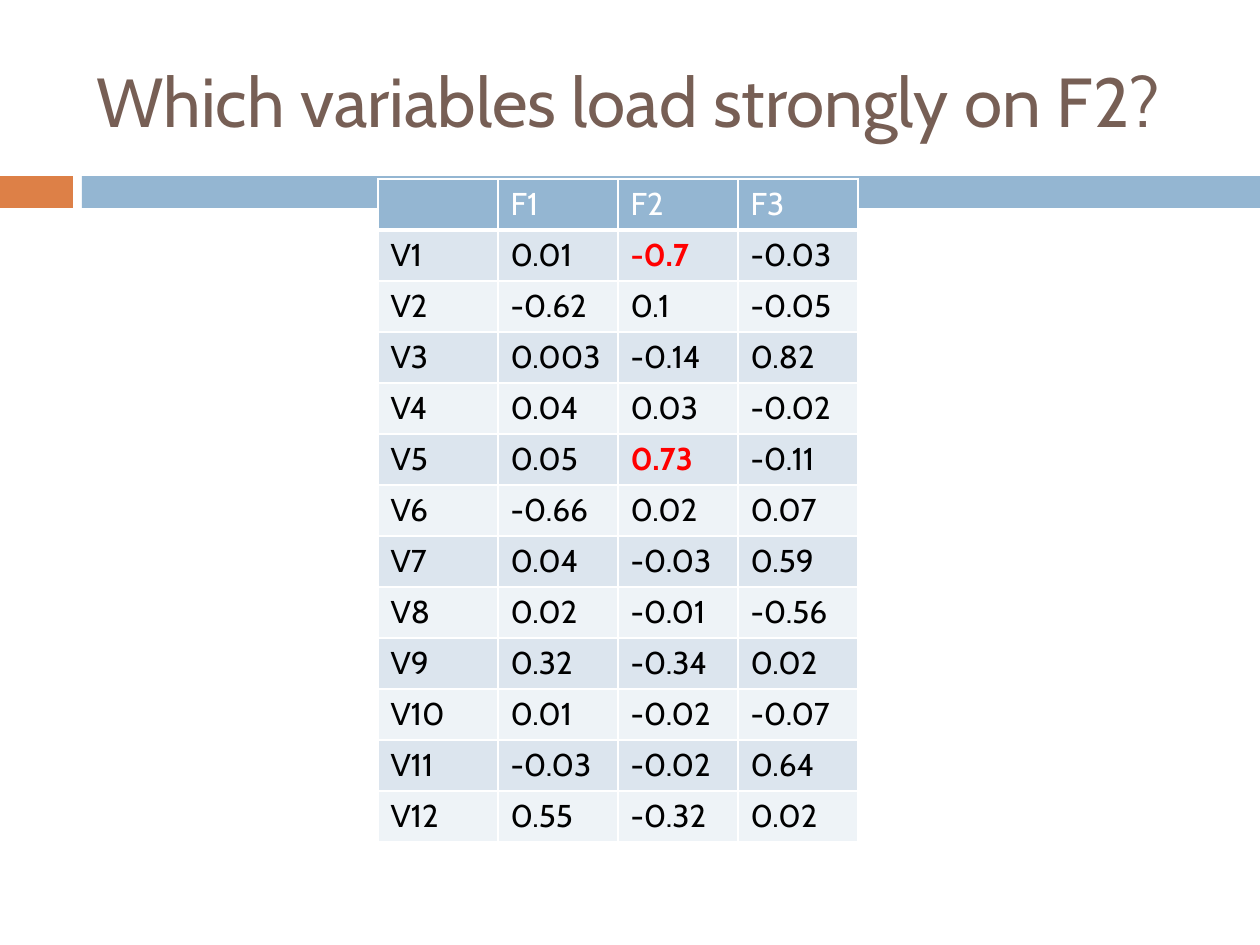
"""Build a slide with a factor loading table that highlights the strong F2 loadings."""
from dataclasses import dataclass

from lxml.etree import SubElement
from pptx import Presentation
from pptx.dml.color import RGBColor as RGB
from pptx.enum.shapes import MSO_SHAPE as SHAPE
from pptx.enum.text import MSO_ANCHOR as ANCHOR
from pptx.oxml.ns import qn
from pptx.util import Pt


@dataclass(frozen=True)
class Theme:
    font: str = "Cabin"
    title: str = "775F55"
    orange: str = "DD8047"
    blue: str = "94B6D2"
    bands: tuple = ("DCE5EE", "EEF3F7")
    white: str = "FFFFFF"
    ink: str = "000000"
    strong: str = "FF0000"
    title_size: float = 39.6
    cell_size: int = 18


T = Theme()
PX = 914400 / 126


def put_text(tf, text, size=T.cell_size, color=T.ink, bold=False):
    r = tf.paragraphs[0].add_run()
    r.text = text
    r.font.name, r.font.size, r.font.bold = T.font, Pt(size), bold
    r.font.color.rgb = RGB.from_string(color)


def set_borders(cell, color, **widths):
    tc_pr = cell._tc.get_or_add_tcPr()
    for side, width in widths.items():
        ln = SubElement(tc_pr, qn(f"a:ln{side}"), w=str(Pt(width)))
        fill = SubElement(ln, qn("a:solidFill"))
        SubElement(fill, qn("a:srgbClr"), val=color)


prs = Presentation()
prs.slide_width, prs.slide_height = round(1260 * PX), round(945 * PX)
s = prs.slides.add_slide(prs.slide_layouts[6])

for left, width, color in [(0, 73, T.orange), (82, 1178, T.blue)]:
    box = [round(v * PX) for v in (left, 176, width, 32)]
    sp = s.shapes.add_shape(SHAPE.RECTANGLE, *box)
    sp.shadow.inherit = False
    sp.fill.solid()
    sp.fill.fore_color.rgb = RGB.from_string(color)
    sp.line.fill.background()

box = [round(v * PX) for v in (84, 32, 1124, 136)]
tf = s.shapes.add_textbox(*box).text_frame
tf.word_wrap = True
tf.vertical_anchor = ANCHOR.MIDDLE
put_text(tf, "Which variables load strongly on F2?", size=T.title_size, color=T.title)

loadings = [
    ("0.01", "-0.7", "-0.03"),
    ("-0.62", "0.1", "-0.05"),
    ("0.003", "-0.14", "0.82"),
    ("0.04", "0.03", "-0.02"),
    ("0.05", "0.73", "-0.11"),
    ("-0.66", "0.02", "0.07"),
    ("0.04", "-0.03", "0.59"),
    ("0.02", "-0.01", "-0.56"),
    ("0.32", "-0.34", "0.02"),
    ("0.01", "-0.02", "-0.07"),
    ("-0.03", "-0.02", "0.64"),
    ("0.55", "-0.32", "0.02"),
]
rows = [("", "F1", "F2", "F3")]
rows += [(f"V{i}", *values) for i, values in enumerate(loadings, 1)]

box = [round(v * PX) for v in (378, 179, 4 * 120, len(rows) * 51)]
table = s.shapes.add_table(len(rows), 4, *box).table
for i, row in enumerate(rows):
    for j, text in enumerate(row):
        cell = table.cell(i, j)
        header = i == 0
        strong = not header and j == 2 and abs(float(text)) >= 0.5
        set_borders(cell, T.white, L=1, R=1, T=1, B=3 if header else 1)
        cell.fill.solid()
        cell.fill.fore_color.rgb = RGB.from_string(T.blue if header else T.bands[(i - 1) % 2])
        color = T.white if header else T.strong if strong else T.ink
        if text:
            put_text(cell.text_frame, text, color=color, bold=strong)

prs.save("out.pptx")
